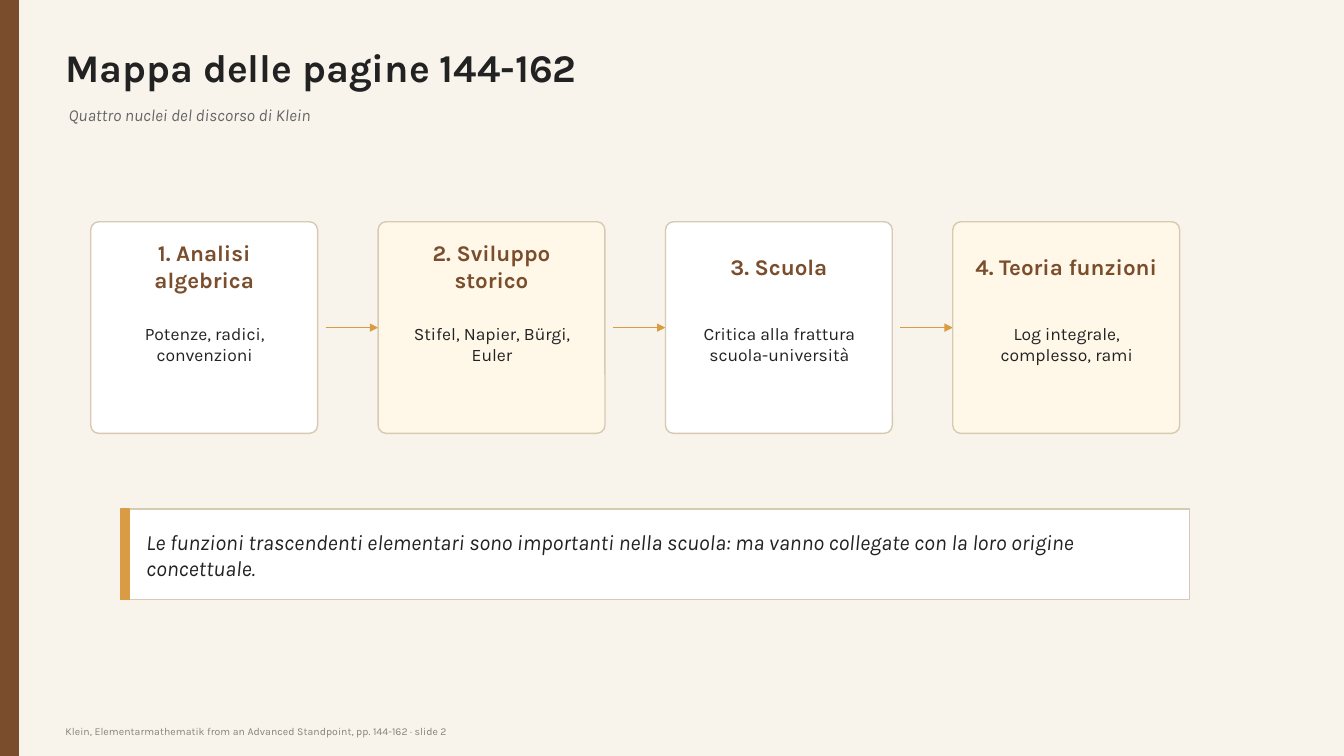
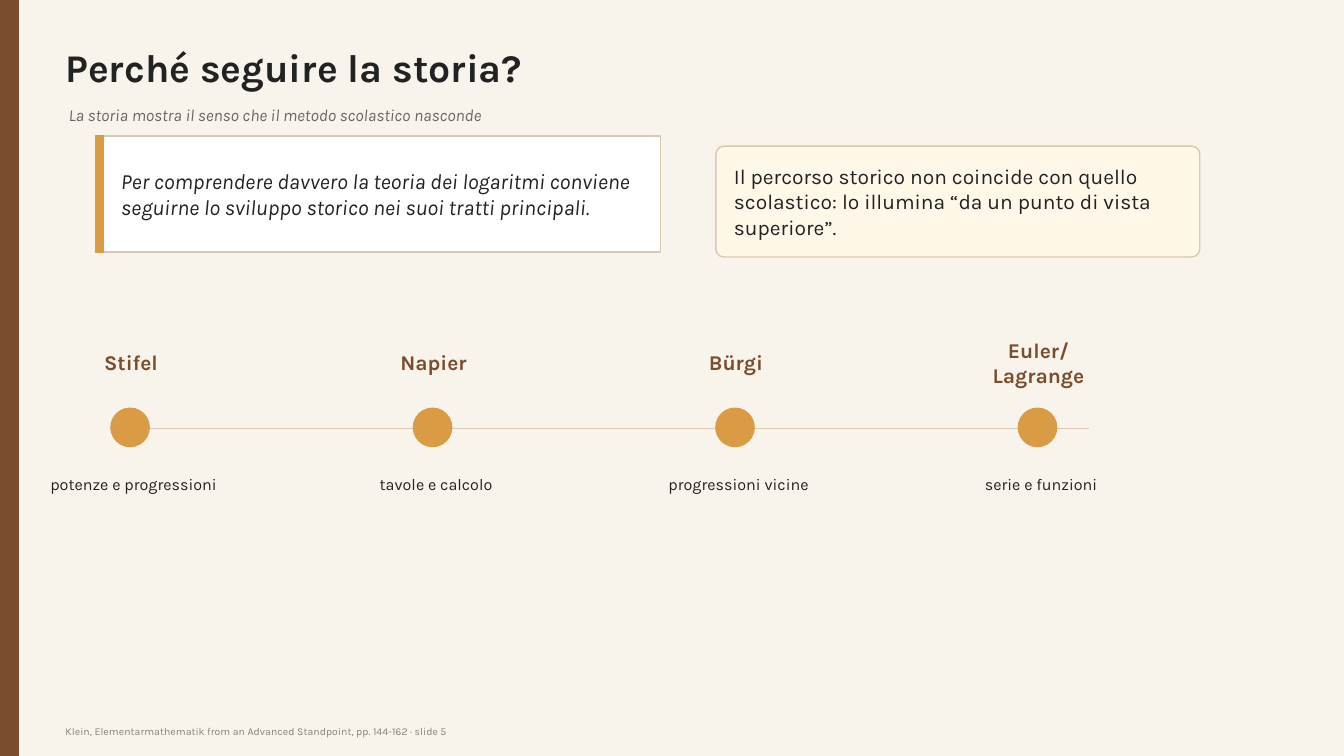
"""Build two slides on Klein's pages about logarithms: a topic map and a timeline."""

from dataclasses import dataclass

from lxml import etree
from pptx import Presentation
from pptx.dml.color import RGBColor
from pptx.enum.shapes import MSO_CONNECTOR, MSO_SHAPE
from pptx.enum.text import MSO_ANCHOR, PP_ALIGN
from pptx.oxml.ns import qn
from pptx.shapes.autoshape import Shape
from pptx.slide import Slide
from pptx.util import Inches, Pt

RECTANGLE = MSO_SHAPE.RECTANGLE
ROUNDED = MSO_SHAPE.ROUNDED_RECTANGLE
OVAL = MSO_SHAPE.OVAL
STRAIGHT = MSO_CONNECTOR.STRAIGHT
MIDDLE = MSO_ANCHOR.MIDDLE
LEFT = PP_ALIGN.LEFT
CENTER = PP_ALIGN.CENTER

FONT = "Karla"
COLORS = {
    "paper": "F8F4EC",
    "brown": "7A4E2D",
    "ink": "222222",
    "subtitle": "666666",
    "footer": "8A8178",
    "border": "D8C9B2",
    "amber": "D99B44",
    "white": "FFFFFF",
    "cream": "FFF8E9",
}
SLIDE_WIDTH, SLIDE_HEIGHT = 13.33, 7.5
CORNER_RADIUS = 0.08
FOOTER = "Klein, Elementarmathematik from an Advanced Standpoint, pp. 144-162 · slide {}"


@dataclass(frozen=True)
class Box:
    """A rectangle on the slide, in inches."""

    left: float
    top: float
    width: float
    height: float

    def lengths(self) -> tuple[Inches, Inches, Inches, Inches]:
        """Return the four sides as lengths."""
        return Inches(self.left), Inches(self.top), Inches(self.width), Inches(self.height)


@dataclass(frozen=True)
class TextStyle:
    """The look of one kind of text."""

    size: float
    color: str = "ink"
    bold: bool = False
    italic: bool = False
    align: PP_ALIGN = LEFT


@dataclass(frozen=True)
class Entry:
    """A heading with its detail, for a topic card or a milestone."""

    heading: str
    detail: str


TITLE = TextStyle(28, bold=True)
SUBTITLE = TextStyle(12, "subtitle", italic=True)
FOOTNOTE = TextStyle(7.5, "footer")
QUOTE = TextStyle(15.5, italic=True)
NOTE = TextStyle(15)
CARD_HEADING = TextStyle(16, "brown", bold=True, align=CENTER)
CARD_DETAIL = TextStyle(12.5, align=CENTER)
MILESTONE_NAME = TextStyle(15, "brown", bold=True, align=CENTER)
MILESTONE_DETAIL = TextStyle(11.5, align=CENTER)

TOPICS = [
    Entry("1. Analisi algebrica", "Potenze, radici, convenzioni"),
    Entry("2. Sviluppo storico", "Stifel, Napier, Bürgi, Euler"),
    Entry("3. Scuola", "Critica alla frattura scuola-università"),
    Entry("4. Teoria funzioni", "Log integrale, complesso, rami"),
]
MILESTONES = [
    Entry("Stifel", "potenze e progressioni"),
    Entry("Napier", "tavole e calcolo"),
    Entry("Bürgi", "progressioni vicine"),
    Entry("Euler/Lagrange", "serie e funzioni"),
]


def rgb(name: str) -> RGBColor:
    """Look up a named colour."""
    return RGBColor.from_string(COLORS[name])


def add_text(slide: Slide, box: Box, text: str, style: TextStyle) -> None:
    """Add a wrapped text box without margins."""
    frame = slide.shapes.add_textbox(*box.lengths()).text_frame
    frame.word_wrap = True
    frame.vertical_anchor = MIDDLE
    frame.margin_left = frame.margin_top = frame.margin_right = frame.margin_bottom = 0
    frame.text = text
    paragraph = frame.paragraphs[0]
    paragraph.alignment = style.align
    font = paragraph.runs[0].font
    font.name = FONT
    font.size = Pt(style.size)
    font.bold = style.bold
    font.italic = style.italic
    font.color.rgb = rgb(style.color)


def add_block(slide: Slide, kind: MSO_SHAPE, box: Box, fill: str, line: str) -> Shape:
    """Add a flat preset shape with a one-point outline."""
    shape = slide.shapes.add_shape(kind, *box.lengths())
    shape.shadow.inherit = False
    shape.fill.solid()
    shape.fill.fore_color.rgb = rgb(fill)
    shape.line.color.rgb = rgb(line)
    shape.line.width = Pt(1)
    return shape


def add_card(slide: Slide, box: Box, fill: str) -> None:
    """Add a rounded card with the shared corner radius."""
    card = add_block(slide, ROUNDED, box, fill, "border")
    card.adjustments[0] = CORNER_RADIUS / min(box.width, box.height)


def add_line(slide: Slide, start: float, end: float, y: float, color: str, arrow: bool = False) -> None:
    """Add a horizontal line, with an arrowhead at its end if asked."""
    connector = slide.shapes.add_connector(STRAIGHT, Inches(start), Inches(y), Inches(end), Inches(y))
    connector.line.color.rgb = rgb(color)
    connector.line.width = Pt(1)
    if arrow:
        etree.SubElement(connector.line._get_or_add_ln(), qn("a:tailEnd"), type="triangle")
    etree.SubElement(connector._element.spPr, qn("a:effectLst"))


def add_quote(slide: Slide, box: Box, text: str) -> None:
    """Add an italic quotation in a panel with an amber edge."""
    add_block(slide, RECTANGLE, box, "white", "border")
    add_block(slide, RECTANGLE, Box(box.left, box.top, 0.08, box.height), "amber", "amber")
    inner = Box(box.left + 0.25, box.top + 0.18, box.width - 0.4, box.height - 0.36)
    add_text(slide, inner, text, QUOTE)


def add_base_slide(presentation: Presentation, title: str, subtitle: str, number: int) -> Slide:
    """Add a slide with the shared background, band, titles and footer."""
    slide = presentation.slides.add_slide(presentation.slide_layouts[6])
    background = slide.background.fill
    background.solid()
    background.fore_color.rgb = rgb("paper")
    add_block(slide, RECTANGLE, Box(0, 0, 0.18, SLIDE_HEIGHT), "brown", "brown")
    add_text(slide, Box(0.65, 0.35, 10.6, 0.62), title, TITLE)
    add_text(slide, Box(0.68, 0.97, 10.2, 0.33), subtitle, SUBTITLE)
    add_text(slide, Box(0.65, 7.16, 9.5, 0.18), FOOTER.format(number), FOOTNOTE)
    return slide


def build_map(presentation: Presentation) -> None:
    """Build the map of four topics joined by arrows."""
    slide = add_base_slide(
        presentation, "Mappa delle pagine 144-162", "Quattro nuclei del discorso di Klein", 2
    )
    width, pitch = 2.25, 2.85
    for index, topic in enumerate(TOPICS):
        left = 0.9 + index * pitch
        add_card(slide, Box(left, 2.2, width, 2.1), "cream" if index % 2 else "white")
        add_text(slide, Box(left + 0.15, 2.45, 1.95, 0.38), topic.heading, CARD_HEADING)
        add_text(slide, Box(left + 0.18, 3.05, 1.9, 0.72), topic.detail, CARD_DETAIL)
        if index < len(TOPICS) - 1:
            add_line(slide, left + width + 0.08, left + pitch, 3.25, "amber", arrow=True)
    add_quote(
        slide,
        Box(1.2, 5.05, 10.6, 0.9),
        "Le funzioni trascendenti elementari sono importanti nella scuola: "
        "ma vanno collegate con la loro origine concettuale.",
    )


def build_timeline(presentation: Presentation) -> None:
    """Build the timeline of the history of logarithms."""
    slide = add_base_slide(
        presentation,
        "Perché seguire la storia?",
        "La storia mostra il senso che il metodo scolastico nasconde",
        5,
    )
    add_quote(
        slide,
        Box(0.95, 1.35, 5.6, 1.15),
        "Per comprendere davvero la teoria dei logaritmi conviene "
        "seguirne lo sviluppo storico nei suoi tratti principali.",
    )
    add_line(slide, 1.2, 10.8, 4.25, "border")
    for index, milestone in enumerate(MILESTONES):
        left = 1.1 + index * 3
        add_block(slide, OVAL, Box(left, 4.05, 0.38, 0.38), "amber", "amber")
        add_text(slide, Box(left - 0.35, 3.47, 1.1, 0.25), milestone.heading, MILESTONE_NAME)
        add_text(slide, Box(left - 0.65, 4.55, 1.75, 0.5), milestone.detail, MILESTONE_DETAIL)
    add_card(slide, Box(7.1, 1.45, 4.8, 1.1), "cream")
    add_text(
        slide,
        Box(7.28, 1.6, 4.44, 0.8),
        "Il percorso storico non coincide con quello scolastico: "
        "lo illumina “da un punto di vista superiore”.",
        NOTE,
    )


def main() -> None:
    """Build and save the presentation."""
    presentation = Presentation()
    presentation.slide_width = Inches(SLIDE_WIDTH)
    presentation.slide_height = Inches(SLIDE_HEIGHT)
    build_map(presentation)
    build_timeline(presentation)
    presentation.save("out.pptx")


if __name__ == "__main__":
    main()
